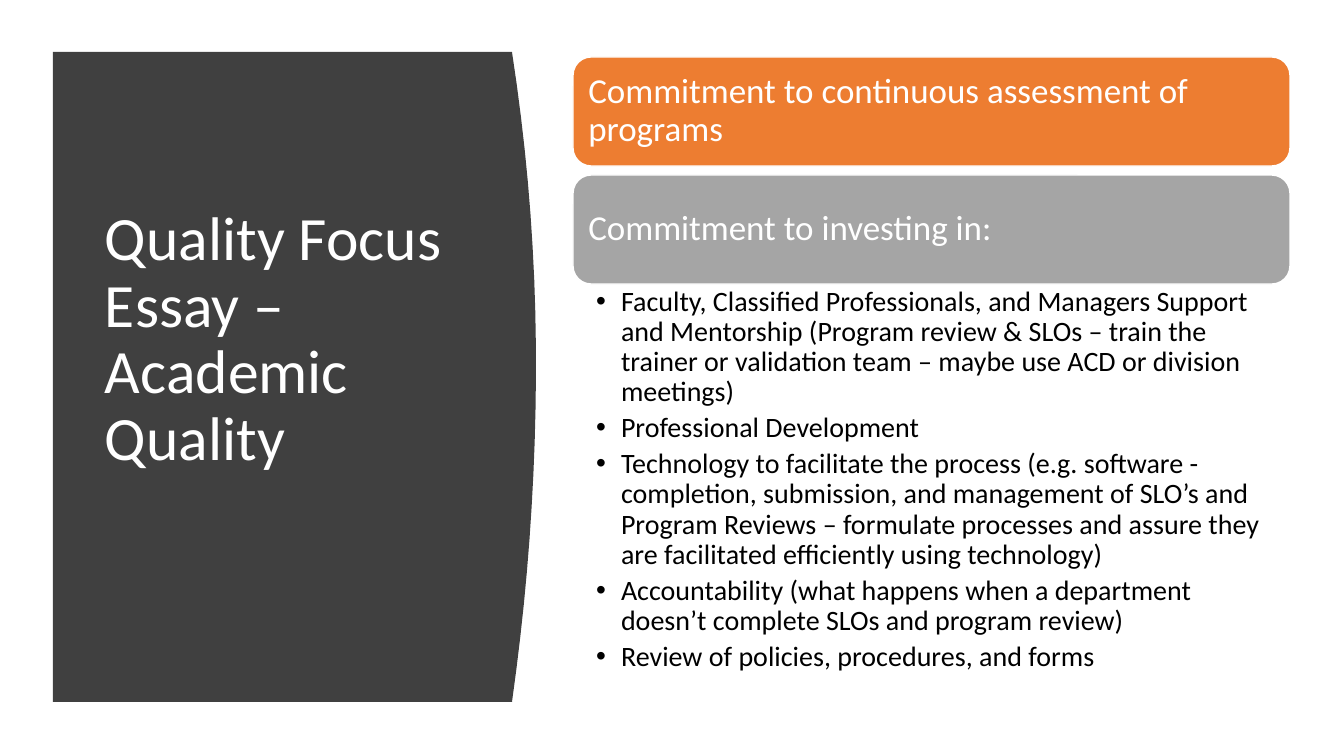
from dataclasses import dataclass

from lxml.etree import SubElement
from pptx import Presentation
from pptx.dml.color import RGBColor
from pptx.enum.shapes import MSO_SHAPE as Shape
from pptx.enum.text import MSO_ANCHOR as Anchor, PP_ALIGN as Align
from pptx.oxml.ns import qn
from pptx.util import Emu, Pt

SLIDE_WIDTH, SLIDE_HEIGHT = 1344, 756
EMU_PER_PX = 12192000 / SLIDE_WIDTH


@dataclass(frozen=True)
class Theme:
    font: str = "Calibri"
    white: str = "FFFFFF"
    black: str = "000000"
    panel: str = "404040"
    orange: str = "ED7D31"
    gray: str = "A5A5A5"
    title_size: int = 44
    card_size: int = 25
    bullet_size: int = 20


THEME = Theme()
TITLE = "Quality Focus Essay – Academic Quality"
CARDS = [
    ("Commitment to continuous assessment of programs", THEME.orange),
    ("Commitment to investing in:", THEME.gray),
]
INVESTMENTS = [
    "Faculty, Classified Professionals, and Managers Support and Mentorship "
    "(Program review & SLOs – train the trainer or validation team – maybe use "
    "ACD or division meetings)",
    "Professional Development",
    "Technology to facilitate the process (e.g. software - completion, submission, "
    "and management of SLO’s and Program Reviews – formulate processes and assure "
    "they are facilitated efficiently using technology)",
    "Accountability (what happens when a department doesn’t complete SLOs and "
    "program review)",
    "Review of policies, procedures, and forms",
]


def px(length):
    return Emu(round(length * EMU_PER_PX))


def px_box(*lengths):
    return [px(length) for length in lengths]


def paint(shape, fill, line=None):
    shape.shadow.inherit = False
    shape.fill.solid()
    shape.fill.fore_color.rgb = RGBColor.from_string(fill)
    if line:
        shape.line.color.rgb = RGBColor.from_string(line)
        shape.line.width = Pt(1)
    else:
        shape.line.fill.background()


def add_bullet(paragraph, indent):
    properties = paragraph._p.get_or_add_pPr()
    properties.set("marL", str(px(indent)))
    properties.set("indent", str(-px(indent)))
    SubElement(properties, qn("a:buFont")).set("typeface", "Arial")
    SubElement(properties, qn("a:buChar")).set("char", "•")


def write(shape, paragraphs, size, color, anchor=Anchor.MIDDLE,
          margins=(10, 10, 10, 10), space_after=0, bullet_indent=None):
    """Fill a shape with text; margins run left, top, right, bottom in px."""
    frame = shape.text_frame
    frame.word_wrap = True
    frame.vertical_anchor = anchor
    (frame.margin_left, frame.margin_top,
     frame.margin_right, frame.margin_bottom) = px_box(*margins)
    for index, text in enumerate(paragraphs):
        paragraph = frame.add_paragraph() if index else frame.paragraphs[0]
        paragraph.alignment = Align.LEFT
        paragraph.line_spacing = 0.9
        paragraph.space_after = Pt(space_after)
        run = paragraph.add_run()
        run.text = text
        run.font.name = THEME.font
        run.font.size = Pt(size)
        run.font.color.rgb = RGBColor.from_string(color)
        if bullet_indent:
            add_bullet(paragraph, bullet_indent)


def add_title_panel(slide, left, top, width, height):
    """Dark panel whose right side bulges outward, with the title on it."""
    bulge, steps = 24, 20
    bottom, peak = top + height, top + 311
    edge = left + width - bulge

    def curve_point(y):
        reach = peak - top if y < peak else bottom - peak
        return px(edge + bulge * (1 - (abs(y - peak) / reach) ** 2)), px(y)

    curve = [curve_point(top + height * step / steps) for step in range(steps + 1)]
    builder = slide.shapes.build_freeform(px(left), px(top))
    builder.add_line_segments(curve + [(px(left), px(bottom))], close=True)
    paint(builder.convert_to_shape(), THEME.panel)

    title = slide.shapes.add_textbox(
        *px_box(left + 42, top + 60, width - 106, height - 193))
    write(title, [TITLE], THEME.title_size, THEME.white, margins=(10, 5, 10, 5))


def add_commitments(slide, left, top, width, height):
    """Stacked cards, with the bullets of the last card filling the rest."""
    card_height, pitch = 109, 118
    for index, (text, fill) in enumerate(CARDS):
        card = slide.shapes.add_shape(
            Shape.ROUNDED_RECTANGLE,
            *px_box(left, top + index * pitch, width, card_height))
        paint(card, fill, line=THEME.white)
        write(card, [text], THEME.card_size, THEME.white)

    used = (len(CARDS) - 1) * pitch + card_height
    bullets = slide.shapes.add_textbox(
        *px_box(left, top + used, width, height - used))
    write(bullets, INVESTMENTS, THEME.bullet_size, THEME.black, anchor=Anchor.TOP,
          margins=(23, 3, 19, 3), space_after=4, bullet_indent=25)


def main():
    presentation = Presentation()
    presentation.slide_width = px(SLIDE_WIDTH)
    presentation.slide_height = px(SLIDE_HEIGHT)
    slide = presentation.slides.add_slide(presentation.slide_layouts[6])
    add_title_panel(slide, 53, 52, 483, 650)
    add_commitments(slide, 573, 57, 717, 637)
    presentation.save("out.pptx")


if __name__ == "__main__":
    main()
